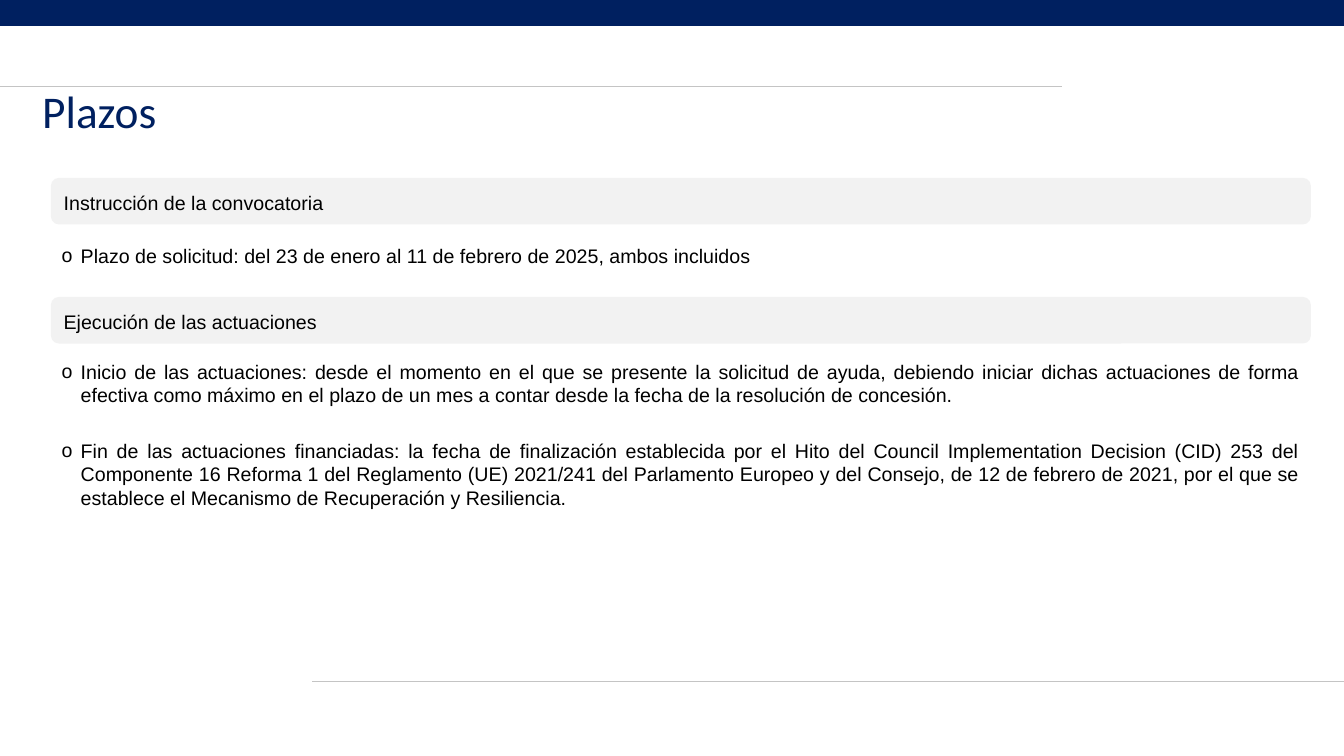
import pptx
import pptx.util
import pptx.dml.color
import pptx.enum.shapes
import pptx.enum.text
import pptx.oxml.ns
from lxml import etree

Cm, Pt = pptx.util.Cm, pptx.util.Pt
Kind = pptx.enum.shapes.MSO_SHAPE
Align = pptx.enum.text.PP_ALIGN

NAVY, PALE, GRAY, BLACK = "002060", "F2F2F2", "C4C4C4", "000000"
TITLE = "Plazos"
PARTS = [
    {"head": "Instrucción de la convocatoria", "top": 4.5,
     "body": (5.61, 1.68),
     "items": ["Plazo de solicitud: del 23 de enero al 11 de febrero de 2025, ambos incluidos"]},
    {"head": "Ejecución de las actuaciones", "top": 7.5,
     "body": (8.76, 4.37),
     "items": [
         "Inicio de las actuaciones: desde el momento en el que se presente la solicitud de ayuda, "
         "debiendo iniciar dichas actuaciones de forma efectiva como máximo en el plazo de un mes "
         "a contar desde la fecha de la resolución de concesión.",
         "Fin de las actuaciones financiadas: la fecha de finalización establecida por el Hito del "
         "Council Implementation Decision (CID) 253 del Componente 16 Reforma 1 del Reglamento (UE) "
         "2021/241 del Parlamento Europeo y del Consejo, de 12 de febrero de 2021, por el que se "
         "establece el Mecanismo de Recuperación y Resiliencia."]},
]
RULES = [(7.87, 33.87, 17.17), (0, 26.77, 2.18)]
LEFT, WIDTH, HEAD = 1.3, 31.72, 1.14
HANG = 0.48


def color(text):
    return pptx.dml.color.RGBColor.from_string(text)


def place(shape, left, top, width, height):
    shape.left, shape.top = Cm(left), Cm(top)
    shape.width, shape.height = Cm(width), Cm(height)
    frame = shape.text_frame
    frame.word_wrap = True
    frame.auto_size = pptx.enum.text.MSO_AUTO_SIZE.NONE
    frame.vertical_anchor = pptx.enum.text.MSO_ANCHOR.MIDDLE
    return frame


def write(para, text, size, font, tint, align, lines, before=0, after=0):
    para.alignment = align
    para.line_spacing = lines
    para.space_before, para.space_after = Pt(before), Pt(after)
    run = para.add_run()
    run.text = text
    run.font.size, run.font.name = Pt(size), font
    run.font.color.rgb = color(tint)


def bullet(para):
    props = para._p.get_or_add_pPr()
    props.set("marL", str(Cm(HANG)))
    props.set("indent", str(-Cm(HANG)))
    name = pptx.oxml.ns.qn
    etree.SubElement(props, name("a:buFont")).set("typeface", "Arial")
    etree.SubElement(props, name("a:buChar")).set("char", "o")


def box(slide, kind, fill, left, top, width, height):
    shape = slide.shapes.add_shape(kind, Cm(left), Cm(top), Cm(width), Cm(height))
    shape.shadow.inherit = False
    shape.fill.solid()
    shape.fill.fore_color.rgb = color(fill)
    shape.line.color.rgb = color(fill)
    shape.line.width = Pt(1)
    return shape


def rule(slide, start, end, top):
    line = slide.shapes.add_connector(
        pptx.enum.shapes.MSO_CONNECTOR.STRAIGHT, Cm(start), Cm(top), Cm(end), Cm(top))
    line.line.color.rgb = color(GRAY)
    line.line.width = Pt(0.5)
    etree.SubElement(line._element.spPr, pptx.oxml.ns.qn("a:effectLst"))


def main():
    deck = pptx.Presentation()
    deck.slide_width, deck.slide_height = Cm(33.87), Cm(19.05)
    slide = deck.slides.add_slide(deck.slide_layouts[3])

    box(slide, Kind.RECTANGLE, NAVY, 0, 0, 33.87, 0.64)
    for ends in RULES:
        rule(slide, *ends)

    frame = place(slide.shapes.title, 0.81, 2.29, 26.26, 1.14)
    write(frame.paragraphs[0], TITLE, 32.4, "Calibri", NAVY, Align.LEFT, 0.9)

    for slot, part in enumerate(PARTS, 1):
        head = box(slide, Kind.ROUNDED_RECTANGLE, PALE, LEFT, part["top"], WIDTH, HEAD)
        frame = place(head, LEFT, part["top"], WIDTH, HEAD)
        write(frame.paragraphs[0], part["head"], 14, "Arial", BLACK,
              Align.JUSTIFY, 1.1, after=6)

        top, height = part["body"]
        frame = place(slide.placeholders[slot], LEFT, top, WIDTH, height)
        for order, item in enumerate(part["items"]):
            para = frame.add_paragraph() if order else frame.paragraphs[0]
            write(para, item, 14, "Arial", BLACK, Align.JUSTIFY, 1.0,
                  before=23 if order else 3)
            bullet(para)

    deck.save("out.pptx")


if __name__ == "__main__":
    main()
